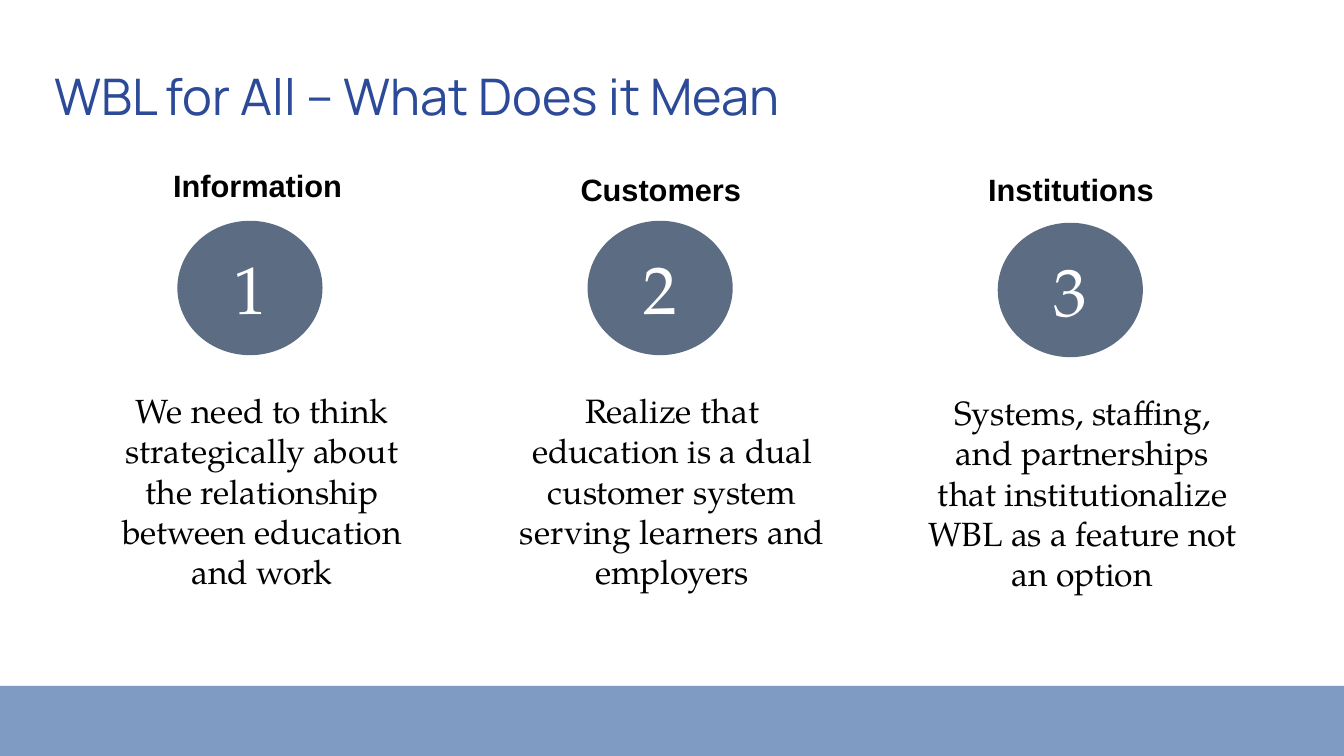
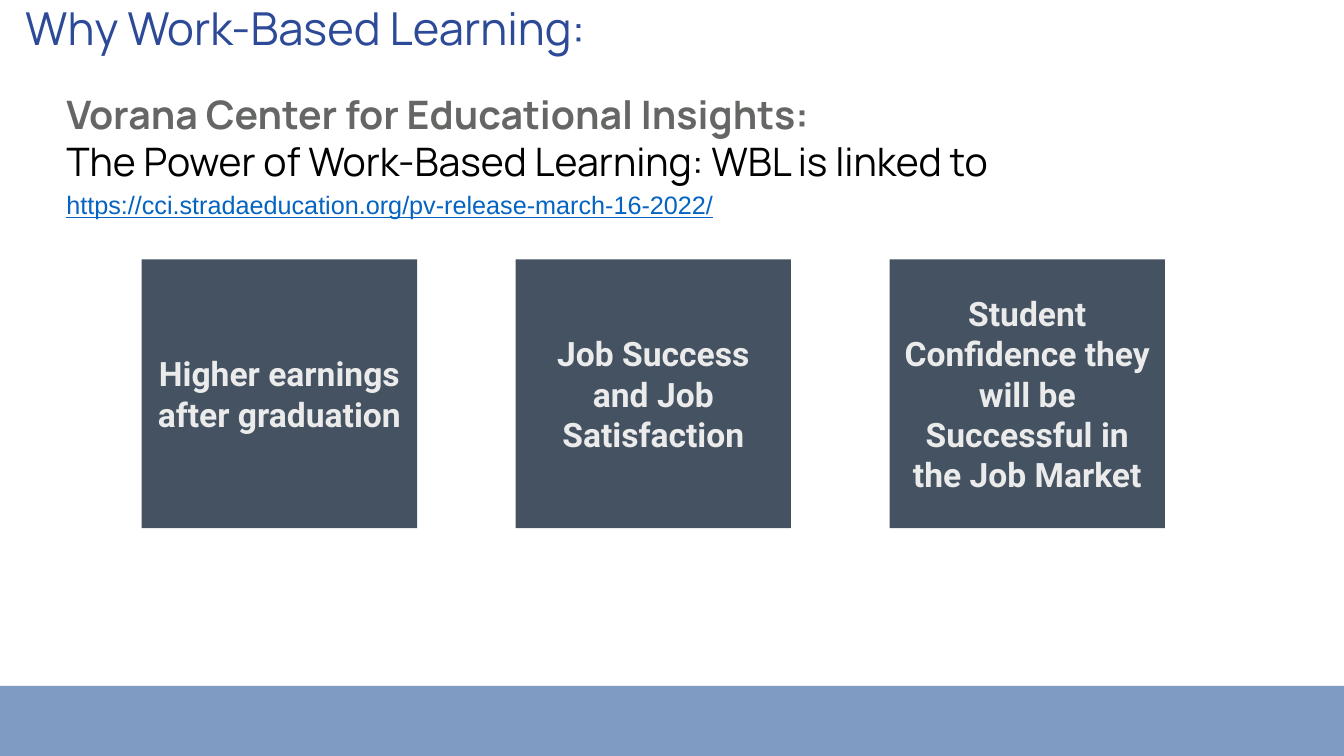
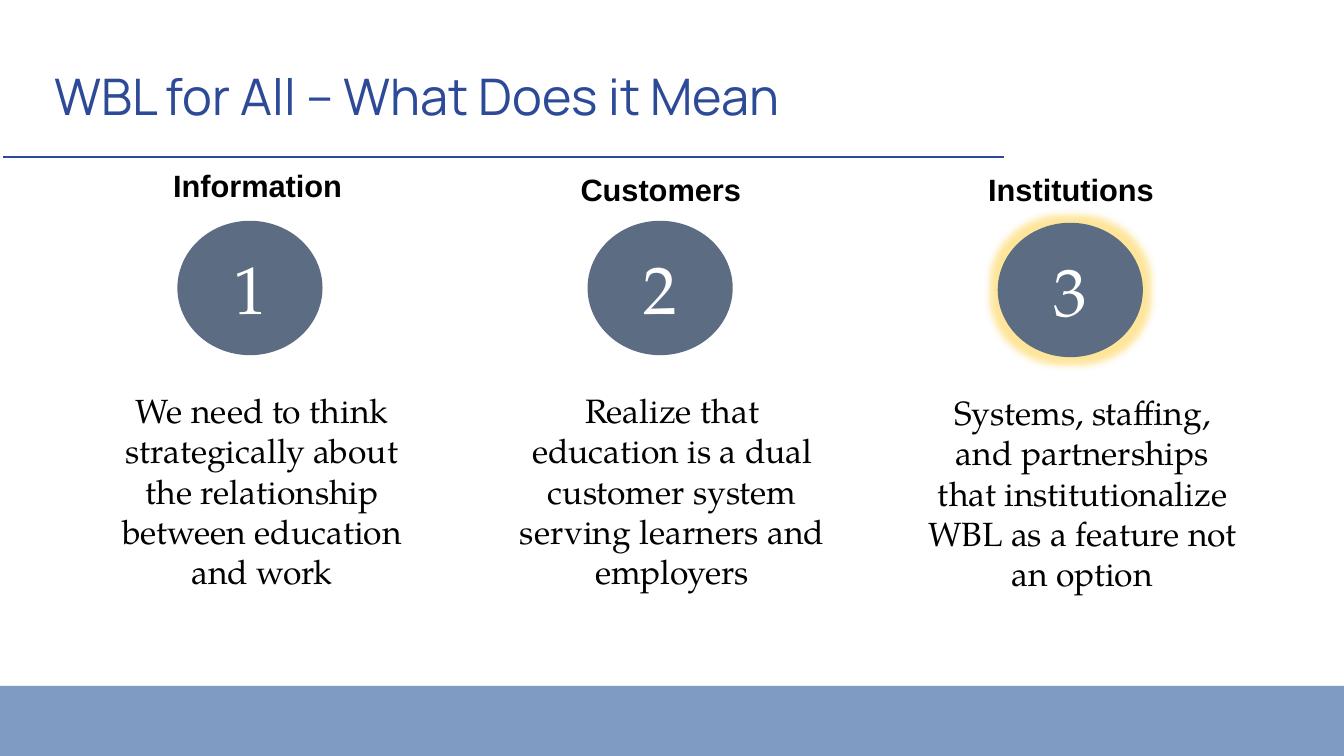
from dataclasses import dataclass
from typing import Optional

from lxml.etree import SubElement
from pptx import Presentation
from pptx.dml.color import RGBColor
from pptx.enum.shapes import MSO_CONNECTOR, MSO_SHAPE
from pptx.enum.text import MSO_ANCHOR as Anchor, MSO_AUTO_SIZE as AutoSize, PP_ALIGN as Align
from pptx.oxml.ns import qn
from pptx.util import Pt

# Shared look
TITLE_BLUE = RGBColor(0x2C, 0x4A, 0x97)
BAND_BLUE = RGBColor(0x7F, 0x9B, 0xC3)
CIRCLE_SLATE = RGBColor(0x5C, 0x6D, 0x83)
CARD_SLATE = RGBColor(0x45, 0x52, 0x62)
CARD_TEXT = RGBColor(0xEA, 0xEB, 0xEA)
SOURCE_GRAY = RGBColor(0x65, 0x67, 0x65)
LINK_BLUE = RGBColor(0x05, 0x63, 0xC1)
GLOW_GOLD = RGBColor(0xFF, 0xC0, 0x00)
BLACK = RGBColor(0, 0, 0)
WHITE = RGBColor(0xFF, 0xFF, 0xFF)

SLIDE_WIDTH, SLIDE_HEIGHT = 960, 540
BAND_TOP = 490
TITLE_ONLY = 5
SERIF = "TeX Gyre Pagella"


@dataclass(frozen=True)
class Box:
    """A rectangle in points."""
    left: float
    top: float
    width: float
    height: float


@dataclass(frozen=True)
class TextStyle:
    font: str
    size: float
    color: RGBColor
    bold: bool = False
    underline: bool = False
    align: Align = Align.LEFT


@dataclass(frozen=True)
class Meaning:
    """One numbered column; drop lowers its circle and text."""
    heading: str
    heading_left: float
    heading_top: float
    text: str
    drop: float = 0


TITLE_BOX = Box(31.7, 18.7, 828, 104.4)
TITLE_STYLE = TextStyle("Manrope", 36, TITLE_BLUE)
HEADING_STYLE = TextStyle("Arial", 22, BLACK, bold=True, align=Align.CENTER)
BODY_STYLE = TextStyle(SERIF, 24, BLACK, align=Align.CENTER)
NUMBER_STYLE = TextStyle(SERIF, 48, WHITE, align=Align.CENTER)
CARD_STYLE = TextStyle("Roboto", 24, CARD_TEXT, bold=True, align=Align.CENTER)
SOURCE_STYLE = TextStyle("Manrope", 28, SOURCE_GRAY, bold=True)
CLAIM_STYLE = TextStyle("Manrope", 28, BLACK)
LINK_STYLE = TextStyle("Arial", 18, LINK_BLUE, underline=True)

COLUMN_PITCH = 293
MEANINGS = (
    Meaning("Information", 110.2, 115.9,
            "We need to think strategically about the relationship between education and work"),
    Meaning("Customers", 398.2, 118.1,
            "Realize that education is a dual customer system serving learners and employers"),
    Meaning("Institutions", 691.2, 118.1,
            "Systems, staffing, and partnerships that institutionalize WBL as a feature not an option",
            drop=1.4),
)

CARD_PITCH = 267.1
BENEFITS = (
    "Higher earnings after graduation",
    "Job Success and Job Satisfaction",
    "Student Confidence they will be Successful in the Job Market",
)


def place(box: Box) -> tuple:
    return Pt(box.left), Pt(box.top), Pt(box.width), Pt(box.height)


def write(paragraph, text: str, style: TextStyle) -> None:
    paragraph.text = text
    paragraph.alignment = style.align
    font = paragraph.font
    font.name, font.size = style.font, Pt(style.size)
    font.bold, font.underline = style.bold, style.underline
    font.color.rgb = style.color


def add_text(slide, box: Box, *lines: tuple[str, TextStyle], inset: float = 3.6) -> None:
    frame = slide.shapes.add_textbox(*place(box)).text_frame
    frame.word_wrap = True
    frame.margin_top = frame.margin_bottom = Pt(inset)
    for index, (text, style) in enumerate(lines):
        paragraph = frame.add_paragraph() if index else frame.paragraphs[0]
        write(paragraph, text, style)


def add_filled(slide, kind: MSO_SHAPE, box: Box, fill: RGBColor,
               text: str = "", style: Optional[TextStyle] = None):
    shape = slide.shapes.add_shape(kind, *place(box))
    shape.shadow.inherit = False
    shape.fill.solid()
    shape.fill.fore_color.rgb = fill
    shape.line.fill.background()
    if style:
        frame = shape.text_frame
        frame.word_wrap = True
        frame.vertical_anchor = Anchor.MIDDLE
        write(frame.paragraphs[0], text, style)
    return shape


def add_glow(shape, color: RGBColor, radius: float, opacity: int) -> None:
    effects = shape._element.spPr.find(qn("a:effectLst"))
    glow = SubElement(effects, qn("a:glow"), rad=str(Pt(radius)))
    tint = SubElement(glow, qn("a:srgbClr"), val=str(color))
    SubElement(tint, qn("a:alpha"), val=str(opacity * 1000))


def add_title_rule(slide) -> None:
    rule = slide.shapes.add_connector(MSO_CONNECTOR.STRAIGHT, Pt(2.2), Pt(112.3), Pt(717.1), Pt(112.3))
    rule.line.color.rgb = TITLE_BLUE
    rule.line.width = Pt(1)
    SubElement(rule._element.spPr, qn("a:effectLst"))


def start_slide(presentation, title: str, box: Box = TITLE_BOX, size: float = TITLE_STYLE.size):
    """Add a slide with its title and the bottom band."""
    slide = presentation.slides.add_slide(presentation.slide_layouts[TITLE_ONLY])
    holder = slide.shapes.title
    holder.left, holder.top, holder.width, holder.height = place(box)
    frame = holder.text_frame
    frame.word_wrap = True
    frame.auto_size = AutoSize.NONE
    frame.vertical_anchor = Anchor.MIDDLE
    paragraph = frame.paragraphs[0]
    write(paragraph, title, TITLE_STYLE)
    paragraph.font.size = Pt(size)
    paragraph.line_spacing = 0.9
    band = Box(0, BAND_TOP, SLIDE_WIDTH, SLIDE_HEIGHT - BAND_TOP)
    add_filled(slide, MSO_SHAPE.RECTANGLE, band, BAND_BLUE)
    return slide


def build_meaning_slide(presentation, highlight: Optional[int] = None) -> None:
    slide = start_slide(presentation, "WBL for All – What Does it Mean")
    if highlight:
        add_title_rule(slide)
    for index, meaning in enumerate(MEANINGS):
        number, shift = index + 1, index * COLUMN_PITCH
        add_text(slide, Box(meaning.heading_left, meaning.heading_top, 147.6, 33.8),
                 (meaning.heading, HEADING_STYLE))
        circle = add_filled(slide, MSO_SHAPE.OVAL,
                            Box(126.7 + shift, 157.7 + meaning.drop, 103.7, 96),
                            CIRCLE_SLATE, str(number), NUMBER_STYLE)
        circle.text_frame.margin_top = circle.text_frame.margin_bottom = Pt(7.2)
        if number == highlight:
            add_glow(circle, GLOW_GOLD, radius=11, opacity=40)
        add_text(slide, Box(66.2 + shift, 271.4 + meaning.drop, 241.9, 44.6),
                 (meaning.text, BODY_STYLE), inset=7.2)


def build_benefit_slide(presentation) -> None:
    slide = start_slide(presentation, "Why Work-Based Learning:", Box(10.8, 4.3, 897.8, 50), 32.4)
    title_frame = slide.shapes.title.text_frame
    title_frame.vertical_anchor = Anchor.TOP
    title_frame.margin_top = 0
    add_text(slide, Box(40.3, 61.2, 823.7, 74.9),
             ("Vorana Center for Educational Insights:", SOURCE_STYLE),
             ("The Power of Work-Based Learning: WBL is linked to", CLAIM_STYLE))
    add_text(slide, Box(40.3, 131.8, 480.2, 28.8),
             ("https://cci.stradaeducation.org/pv-release-march-16-2022/", LINK_STYLE))
    for index, benefit in enumerate(BENEFITS):
        card = Box(101.2 + index * CARD_PITCH, 185.2, 196.7, 192)
        add_filled(slide, MSO_SHAPE.RECTANGLE, card, CARD_SLATE, benefit, CARD_STYLE)


def main() -> None:
    presentation = Presentation()
    presentation.slide_width, presentation.slide_height = Pt(SLIDE_WIDTH), Pt(SLIDE_HEIGHT)
    build_meaning_slide(presentation)
    build_benefit_slide(presentation)
    build_meaning_slide(presentation, highlight=3)
    presentation.save("out.pptx")


if __name__ == "__main__":
    main()
